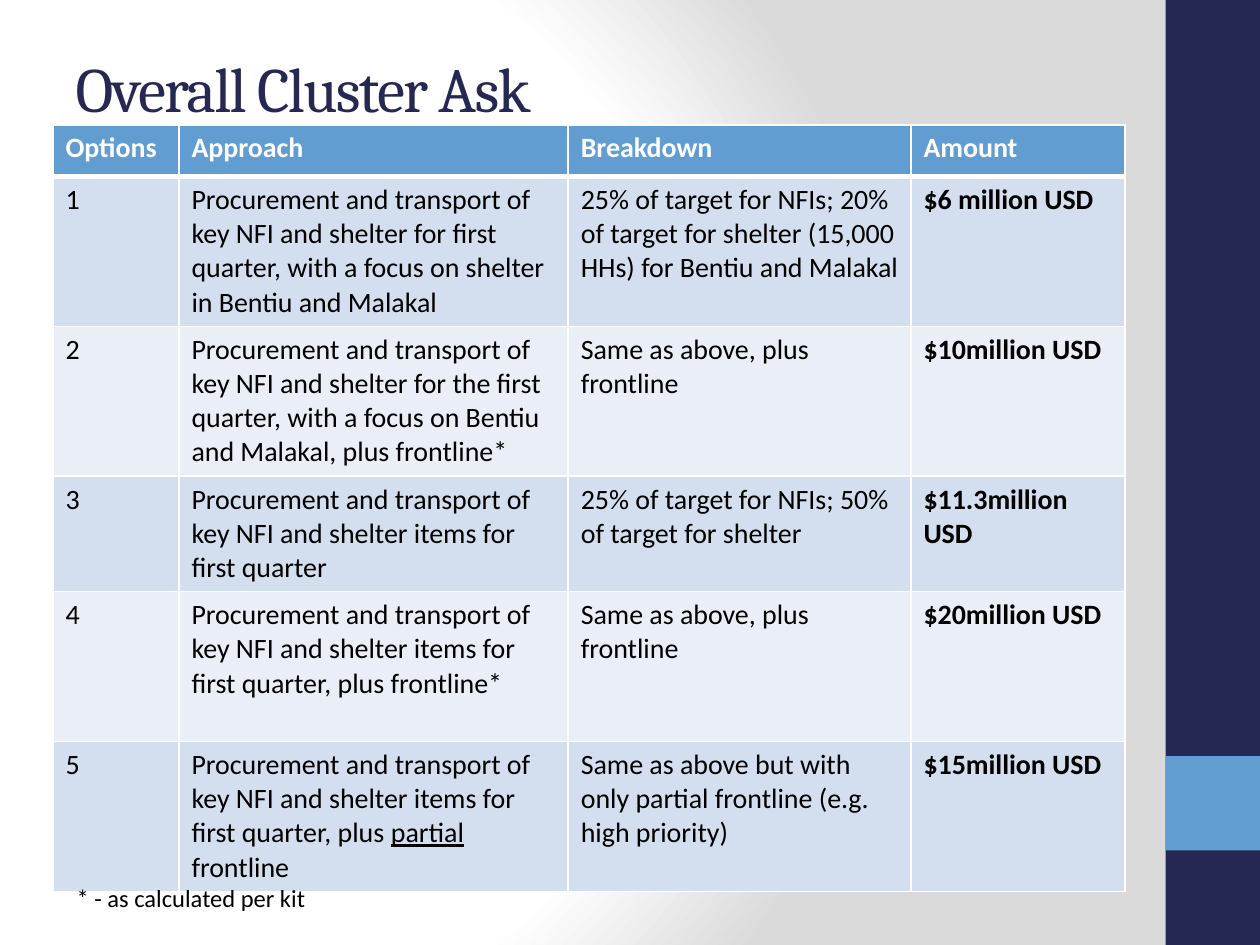
from lxml import etree
from pptx import Presentation
from pptx.dml.color import RGBColor
from pptx.enum import shapes, text
from pptx.oxml import parse_xml
from pptx.oxml.ns import nsdecls, qn
from pptx.util import Inches, Pt

NAVY = RGBColor(0x24, 0x28, 0x52)
BLUE = RGBColor(0x62, 0x9D, 0xD1)
WHITE = RGBColor(0xFF, 0xFF, 0xFF)
BLACK = RGBColor(0x00, 0x00, 0x00)
SILVER = RGBColor(0xDA, 0xDA, 0xDA)
BANDS = (RGBColor(0xD3, 0xDF, 0xEE), RGBColor(0xEA, 0xEF, 0xF7))

COLUMN_WIDTHS = (1, 3.09, 2.72, 1.7)
ROW_HEIGHTS = (0.41, 1.19, 1.19, 0.91, 1.19, 1.19)
HEADER = ("Options", "Approach", "Breakdown", "Amount")
SUPPLY = "Procurement and transport of key NFI and shelter "
UNDERLINED = "partial "
# A cell is a tuple of runs
OPTIONS = (
    ((SUPPLY + "for first quarter, with a focus on shelter in Bentiu and Malakal",),
     "25% of target for NFIs; 20% of target for shelter (15,000 HHs) for Bentiu and Malakal",
     "$6 million USD"),
    ((SUPPLY + "for the first quarter, with a focus on Bentiu and Malakal, plus frontline*",),
     "Same as above, plus frontline", "$10million USD"),
    ((SUPPLY + "items for first quarter",),
     "25% of target for NFIs; 50% of target for shelter", "$11.3million USD"),
    ((SUPPLY + "items for first quarter, plus frontline*",),
     "Same as above, plus frontline", "$20million USD"),
    ((SUPPLY + "items for first quarter, plus ", UNDERLINED, "frontline"),
     "Same as above but with only partial frontline (e.g. high priority)", "$15million USD"),
)


def add_run(paragraph, words, size, color, font="Calibri", bold=False):
    run = paragraph.add_run()
    run.text = words
    run.font.name = font
    run.font.size = Pt(size)
    run.font.bold = bold
    run.font.color.rgb = color
    return run


def set_background(slide):
    """Fill the slide with a radial gradient from white to silver."""
    slide.background.fill.solid()
    properties = slide.element.xpath(".//p:bgPr")[0]
    stops = "".join(
        f'<a:gs pos="{position * 1000}"><a:srgbClr val="{color}"/></a:gs>'
        for position, color in ((0, WHITE), (75, WHITE), (100, SILVER)))
    gradient = parse_xml(
        f'<a:gradFill {nsdecls("a")} rotWithShape="1"><a:gsLst>{stops}</a:gsLst>'
        '<a:path path="circle"><a:fillToRect l="20000" t="50000" r="100000" b="50000"/>'
        '</a:path></a:gradFill>')
    properties.replace(properties.find(qn("a:solidFill")), gradient)


def add_sidebar(slide, left, top, width, height):
    """Draw a navy band with a blue square near its foot."""
    for offset, part_height, color in ((0, height, NAVY), (height * 4 // 5, width, BLUE)):
        shape = slide.shapes.add_shape(
            shapes.MSO_SHAPE.RECTANGLE, left, top + offset, width, part_height)
        shape.shadow.inherit = False
        shape.fill.solid()
        shape.fill.fore_color.rgb = color
        shape.line.fill.background()


def add_title(slide, left, top, width, height):
    title = slide.shapes.title
    title.left, title.top, title.width, title.height = left, top, width, height
    frame = title.text_frame
    frame.vertical_anchor = text.MSO_ANCHOR.MIDDLE
    paragraph = frame.paragraphs[0]
    paragraph.alignment = text.PP_ALIGN.LEFT
    run = add_run(paragraph, "Overall Cluster Ask", 36, NAVY, "Cambria")
    run.font._element.set("spc", "-100")


def set_borders(cell, top=1, bottom=1):
    """Give the cell white borders, with widths in points."""
    properties = cell._tc.get_or_add_tcPr()
    sides = (("lnL", 1), ("lnR", 1), ("lnT", top), ("lnB", bottom))
    for index, (side, points) in enumerate(sides):
        line = etree.Element(qn(f"a:{side}"), w=str(Pt(points)))
        fill = etree.SubElement(line, qn("a:solidFill"))
        etree.SubElement(fill, qn("a:srgbClr"), val=str(WHITE))
        properties.insert(index, line)


def fill_cell(cell, runs, fill, color, bold):
    cell.fill.solid()
    cell.fill.fore_color.rgb = fill
    for words in runs:
        run = add_run(cell.text_frame.paragraphs[0], words, 16, color, bold=bold)
        if words == UNDERLINED:
            run.font.underline = True


def add_options_table(slide, left, top, width, height):
    table = slide.shapes.add_table(
        len(ROW_HEIGHTS), len(COLUMN_WIDTHS), left, top, width, height).table
    for column, column_width in zip(table.columns, COLUMN_WIDTHS):
        column.width = Inches(column_width)
    for row, row_height in zip(table.rows, ROW_HEIGHTS):
        row.height = Inches(row_height)
    for column, heading in enumerate(HEADER):
        cell = table.cell(0, column)
        fill_cell(cell, (heading,), BLUE, WHITE, True)
        set_borders(cell, bottom=3)
    for number, (approach, breakdown, amount) in enumerate(OPTIONS, 1):
        cells = ((str(number),), approach, (breakdown,), (amount,))
        for column, runs in enumerate(cells):
            cell = table.cell(number, column)
            fill_cell(cell, runs, BANDS[(number - 1) % 2], BLACK, HEADER[column] == "Amount")
            set_borders(cell, top=3 if number == 1 else 1)


def add_footnote(slide, left, top, width, height):
    frame = slide.shapes.add_textbox(left, top, width, height).text_frame
    frame.word_wrap = True
    add_run(frame.paragraphs[0], "* - as calculated per kit", 14, BLACK)


def main():
    presentation = Presentation()
    presentation.slide_width, presentation.slide_height = Inches(10), Inches(7.5)
    title_only = presentation.slide_layouts[5]
    slide = presentation.slides.add_slide(title_only)
    set_background(slide)
    add_sidebar(slide, Inches(9.25), 0, Inches(0.75), Inches(7.5))
    add_title(slide, Inches(0.5), Inches(0.3), Inches(8.33), Inches(0.78))
    add_options_table(slide, Inches(0.42), Inches(0.99),
                      Inches(sum(COLUMN_WIDTHS)), Inches(sum(ROW_HEIGHTS)))
    add_footnote(slide, Inches(0.51), Inches(6.96), Inches(8.33), Inches(0.34))
    presentation.save("out.pptx")


if __name__ == "__main__":
    main()
